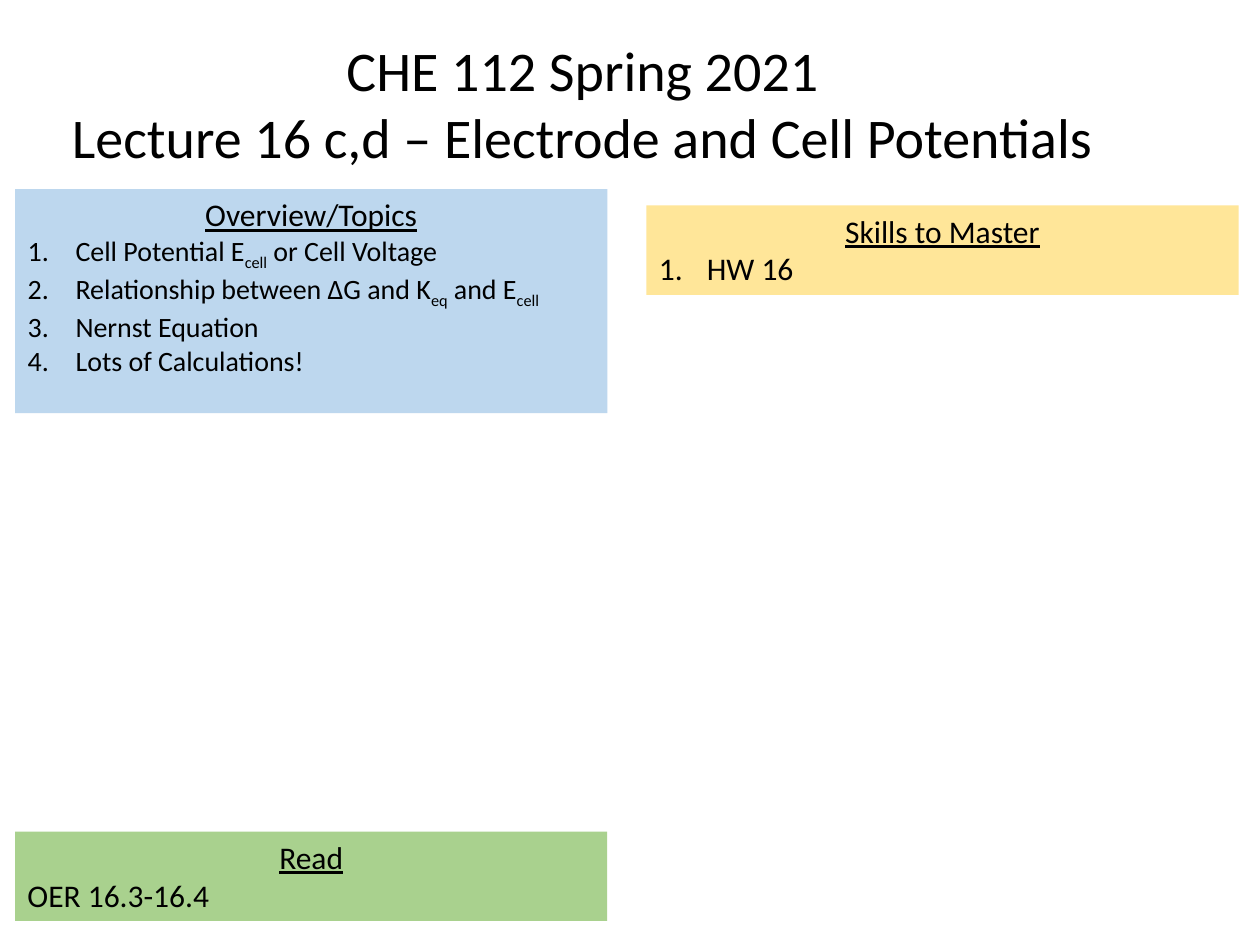
"""Build the lecture overview slide with its topics, skills and reading panels."""
from dataclasses import dataclass

from lxml.etree import SubElement
from pptx import Presentation
from pptx.dml.color import RGBColor
from pptx.enum.text import MSO_ANCHOR, MSO_AUTO_SIZE, PP_ALIGN
from pptx.oxml.ns import qn
from pptx.util import Inches, Pt


@dataclass(frozen=True)
class Theme:
    font: str = "Calibri"
    ink: str = "000000"
    blue: str = "BDD7EE"
    yellow: str = "FFE699"
    green: str = "A9D18E"
    title: int = 32
    heading: int = 18
    compact: int = 16


THEME = Theme()
LEFT, RIGHT, PANEL_WIDTH = 0.12, 5.13, 4.7
TITLE = ["CHE 112 Spring 2021", "Lecture 16 c,d – Electrode and Cell Potentials"]
TITLE_AREA = (0.43, 0.23, 8.39, 1.18)
SUBSCRIPTS = ("cell", "eq")
PANELS = [
    {
        "heading": "Overview/Topics",
        "lines": [
            ["Cell Potential E", "cell", " or Cell Voltage"],
            ["Relationship between ΔG and K", "eq", " and E", "cell"],
            ["Nernst Equation"],
            ["Lots of Calculations!"],
        ],
        "area": (LEFT, 1.5, PANEL_WIDTH, 1.78),
        "fill": THEME.blue, "size": THEME.compact, "numbered": True,
    },
    {
        "heading": "Skills to Master",
        "lines": [["HW 16"]],
        "area": (RIGHT, 1.63, PANEL_WIDTH, 0.71),
        "fill": THEME.yellow, "size": THEME.heading, "numbered": True,
    },
    {
        "heading": "Read",
        "lines": [["OER 16.3-16.4"]],
        "area": (LEFT, 6.6, PANEL_WIDTH, 0.71),
        "fill": THEME.green, "size": THEME.heading, "numbered": False,
    },
]


def place(box, area, wrap=True):
    box.left, box.top, box.width, box.height = map(Inches, area)
    frame = box.text_frame
    frame.auto_size = MSO_AUTO_SIZE.NONE
    frame.word_wrap = wrap
    frame.vertical_anchor = MSO_ANCHOR.TOP
    return frame


def add_line(frame, index, spans, size, align=PP_ALIGN.LEFT, numbered=False, underline=False):
    para = frame.add_paragraph() if index else frame.paragraphs[0]
    para.alignment = align
    para.space_before = Pt(0)
    properties = para._p.get_or_add_pPr()
    indent = Inches(0.38) if numbered else 0
    properties.set("marL", str(indent))
    properties.set("indent", str(-indent))
    if numbered:
        SubElement(properties, qn("a:buFont"), typeface="+mj-lt")
        SubElement(properties, qn("a:buAutoNum"), type="arabicPeriod")
    else:
        SubElement(properties, qn("a:buNone"))
    for text in spans:
        span = para.add_run()
        span.text = text
        span.font.name = THEME.font
        span.font.size = Pt(size)
        span.font.color.rgb = RGBColor.from_string(THEME.ink)
        span.font.underline = underline
        if text in SUBSCRIPTS:
            span.font._element.set("baseline", "-25000")


def fill_panel(box, panel):
    frame = place(box, panel["area"])
    box.fill.solid()
    box.fill.fore_color.rgb = RGBColor.from_string(panel["fill"])
    add_line(frame, 0, [panel["heading"]], THEME.heading, PP_ALIGN.CENTER, underline=True)
    for index, spans in enumerate(panel["lines"], 1):
        add_line(frame, index, spans, panel["size"], numbered=panel["numbered"])


def main():
    deck = Presentation()
    deck.slide_width, deck.slide_height = Inches(10), Inches(7.5)
    page = deck.slides.add_slide(deck.slide_layouts.get_by_name("Two Content"))
    title, topics, skills = page.placeholders
    reading = page.shapes.add_textbox(0, 0, 0, 0)
    for box, panel in zip((topics, skills, reading), PANELS):
        fill_panel(box, panel)
    frame = place(title, TITLE_AREA, wrap=False)
    for index, text in enumerate(TITLE):
        add_line(frame, index, [text], THEME.title, PP_ALIGN.CENTER)
    deck.save("out.pptx")


if __name__ == "__main__":
    main()
